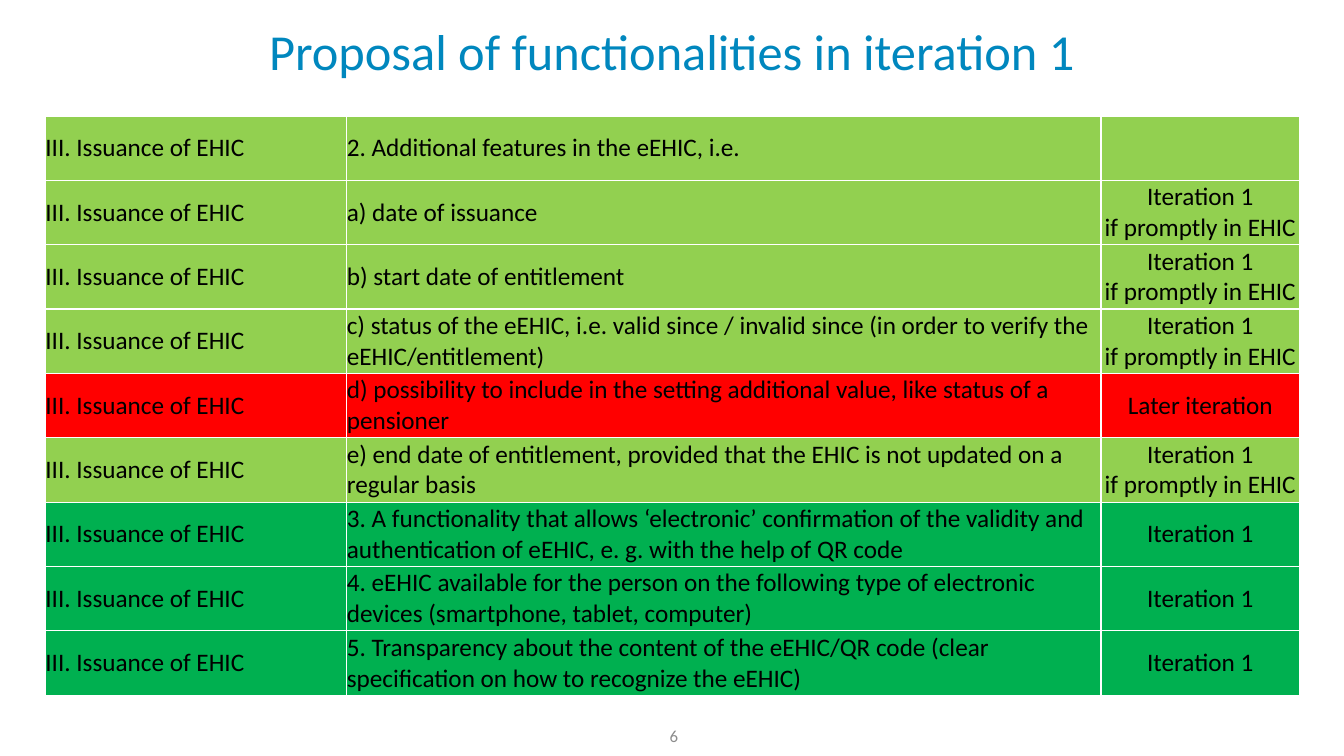
"""Build the slide listing the functionalities proposed for iteration 1."""
from lxml import etree
from pptx import Presentation
from pptx.dml.color import RGBColor
from pptx.enum.text import MSO_ANCHOR, PP_ALIGN
from pptx.oxml.ns import qn
from pptx.util import Inches, Pt

LEFT, CENTER = PP_ALIGN.LEFT, PP_ALIGN.CENTER
MIDDLE = MSO_ANCHOR.MIDDLE

TITLE = "Proposal of functionalities in iteration 1"
PAGE_NUMBER = "6"
TOPIC = "III. Issuance of EHIC"
NOW = "Iteration 1"
IF_PROMPT = "Iteration 1\nif promptly in EHIC"
LATER = "Later iteration"

FEATURES = [
    ("2. Additional features in the eEHIC, i.e.", "", "conditional"),
    ("a) date of issuance", IF_PROMPT, "conditional"),
    ("b) start date of entitlement", IF_PROMPT, "conditional"),
    ("c) status of the eEHIC, i.e. valid since / invalid since "
     "(in order to verify the eEHIC/entitlement)", IF_PROMPT, "conditional"),
    ("d) possibility to include in the setting additional value, "
     "like status of a pensioner", LATER, "later"),
    ("e) end date of entitlement, provided that the EHIC is not updated "
     "on a regular basis", IF_PROMPT, "conditional"),
    ("3. A functionality that allows ‘electronic’ confirmation of the validity "
     "and authentication of eEHIC, e. g. with the help of QR code", NOW, "now"),
    ("4. eEHIC available for the person on the following type of electronic "
     "devices (smartphone, tablet, computer)", NOW, "now"),
    ("5. Transparency about the content of the eEHIC/QR code (clear "
     "specification on how to recognize the eEHIC)", NOW, "now"),
]

THEME = {
    "font": "Calibri",
    "title": {"size": 36, "color": "0087BE"},
    "body": {"size": 18, "color": "000000"},
    "number": {"size": 12, "color": "8C8C8C"},
    "fills": {"conditional": "92D050", "later": "FF0000", "now": "00B050"},
    "border": {"color": "FFFFFF", "width": 1},
}

SLIDE_SIZE = (13.33, 7.5)
TITLE_BOX = (0.21, 0, 12.91, 0.99)
NUMBER_BOX = (5.13, 7.14, 3.11, 0.32)
TABLE_BOX = (0.45, 1.15, 12.44, 5.75)
COLUMN_WIDTHS = (2.99, 7.48, 1.97)
COLUMN_ALIGNMENTS = (LEFT, LEFT, CENTER)
CELL_FORMAT = {
    "margin_left": 0, "margin_top": 0, "margin_right": 0, "margin_bottom": 0,
    "vertical_anchor": MIDDLE,
}


def apply_format(target, values):
    for name, value in values.items():
        setattr(target, name, value)


def write_text(frame, text, style, alignment):
    frame.text = text
    for para in frame.paragraphs:
        para.alignment = alignment
        apply_format(para.font, {"name": THEME["font"], "size": Pt(style["size"])})
        for span in para.runs:
            apply_format(span.font, {"name": THEME["font"], "size": Pt(style["size"])})
            span.font.color.rgb = RGBColor.from_string(style["color"])


def add_text_box(page, place, text, style):
    box = page.shapes.add_textbox(*map(Inches, place))
    apply_format(box.text_frame, {"word_wrap": True, "vertical_anchor": MIDDLE})
    write_text(box.text_frame, text, style, CENTER)


def add_borders(cell):
    properties = cell._tc.get_or_add_tcPr()
    width = str(Pt(THEME["border"]["width"]))
    for side in ("lnL", "lnR", "lnT", "lnB"):
        line = etree.SubElement(properties, qn("a:" + side), w=width)
        fill = etree.SubElement(line, qn("a:solidFill"))
        etree.SubElement(fill, qn("a:srgbClr"), val=THEME["border"]["color"])


def add_feature_table(page):
    table = page.shapes.add_table(
        len(FEATURES), len(COLUMN_WIDTHS), *map(Inches, TABLE_BOX)).table
    apply_format(table, {"first_row": False, "horz_banding": False})
    for column, width in zip(table.columns, COLUMN_WIDTHS):
        column.width = Inches(width)
    for row, (feature, timing, status) in zip(table.rows, FEATURES):
        row.height = Inches(TABLE_BOX[3] / len(FEATURES))
        texts = (TOPIC, feature, timing)
        for cell, text, alignment in zip(row.cells, texts, COLUMN_ALIGNMENTS):
            write_text(cell.text_frame, text, THEME["body"], alignment)
            apply_format(cell, CELL_FORMAT)
            add_borders(cell)
            cell.fill.solid()
            cell.fill.fore_color.rgb = RGBColor.from_string(THEME["fills"][status])


def main():
    deck = Presentation()
    deck.slide_width, deck.slide_height = map(Inches, SLIDE_SIZE)
    page = deck.slides.add_slide(deck.slide_layouts[6])
    add_text_box(page, NUMBER_BOX, PAGE_NUMBER, THEME["number"])
    add_text_box(page, TITLE_BOX, TITLE, THEME["title"])
    add_feature_table(page)
    deck.save("out.pptx")


if __name__ == "__main__":
    main()
